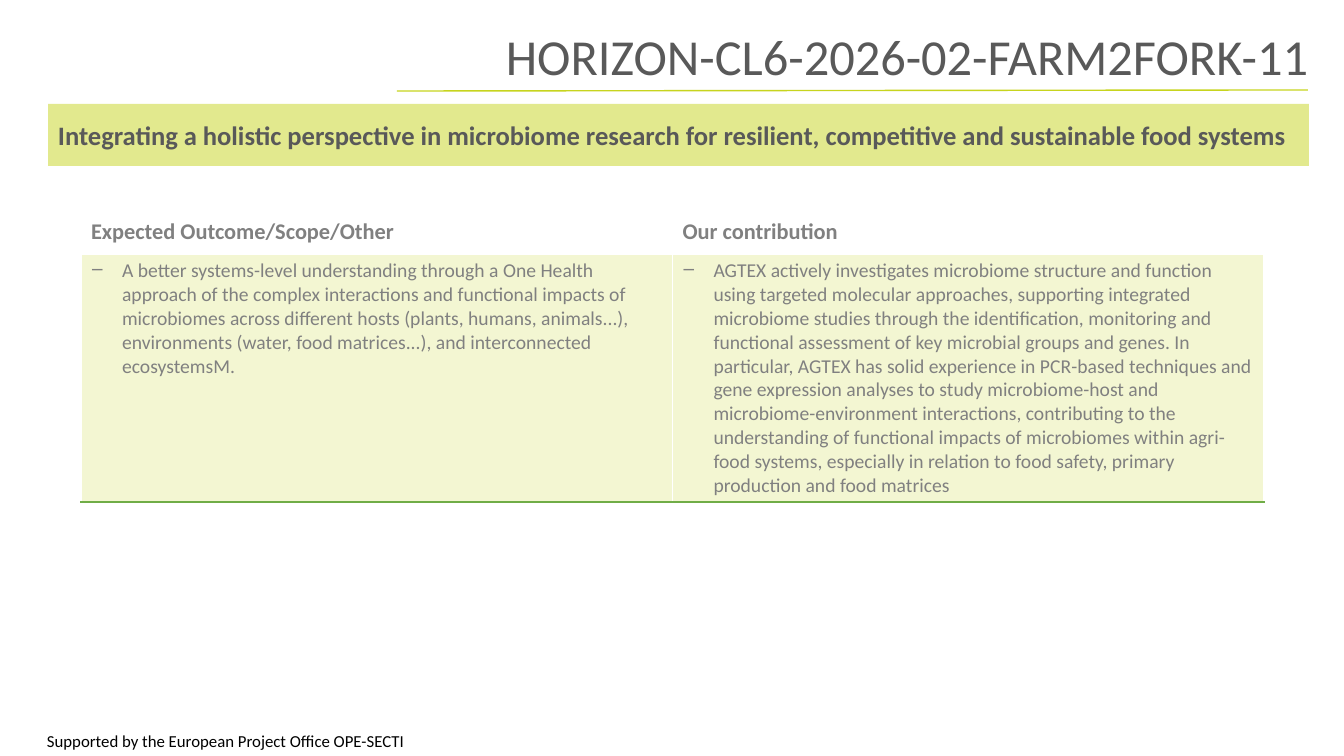
import pptx
import pptx.dml.color
import pptx.enum.shapes
import pptx.enum.text
import pptx.oxml
import pptx.oxml.ns
import pptx.util
from lxml import etree

RGBColor = pptx.dml.color.RGBColor
ANCHOR = pptx.enum.text.MSO_ANCHOR
ALIGN = pptx.enum.text.PP_ALIGN

LIME = RGBColor(0xC7, 0xD4, 0x1E)
GREEN = RGBColor(0x70, 0xAD, 0x47)
DARK_GREY = RGBColor(0x59, 0x59, 0x59)
GREY = RGBColor(0x80, 0x80, 0x80)
BLACK = RGBColor(0, 0, 0)

FONT = "Calibri"
PX_PER_INCH = 100.8

TOPIC = "HORIZON-CL6-2026-02-FARM2FORK-11"
SUBJECT = (
    "Integrating a holistic perspective in microbiome research for resilient, "
    "competitive and sustainable food systems"
)
SUPPORT = "Supported by the European Project Office OPE-SECTI"
COLUMNS = [
    (
        "Expected Outcome/Scope/Other",
        "A better systems-level understanding through a One Health approach of the "
        "complex interactions and functional impacts of microbiomes across different "
        "hosts (plants, humans, animals...), environments (water, food matrices...), "
        "and interconnected ecosystemsM.",
    ),
    (
        "Our contribution",
        "AGTEX actively investigates microbiome structure and function using targeted "
        "molecular approaches, supporting integrated microbiome studies through the "
        "identification, monitoring and functional assessment of key microbial groups "
        "and genes. In particular, AGTEX has solid experience in PCR-based techniques "
        "and gene expression analyses to study microbiome-host and "
        "microbiome-environment interactions, contributing to the understanding of "
        "functional impacts of microbiomes within agri-food systems, especially in "
        "relation to food safety, primary production and food matrices",
    ),
]


def px(length):
    return pptx.util.Inches(length / PX_PER_INCH)


def write(frame, text, size, color, bold=False):
    """Fill a text frame with one formatted paragraph and return it."""
    frame.word_wrap = True
    para = frame.paragraphs[0]
    para.text = text
    font = para.font
    font.name, font.size, font.bold = FONT, pptx.util.Pt(size), bold
    font.color.rgb = color
    return para


def fill_tint(fill, color, percent):
    """Give a solid fill that is only percent opaque."""
    fill.solid()
    fill.fore_color.rgb = color
    tint = fill._xPr.find(".//" + pptx.oxml.ns.qn("a:srgbClr"))
    etree.SubElement(tint, pptx.oxml.ns.qn("a:alpha"), val=str(percent * 1000))


def add_dash(para):
    """Turn a paragraph into a dashed list item with a hanging indent."""
    properties = para._p.get_or_add_pPr()
    indent = px(31)
    properties.set("marL", str(indent))
    properties.set("indent", str(-indent))
    etree.SubElement(properties, pptx.oxml.ns.qn("a:buChar"), char="‒")


def add_bottom_border(cell, color):
    border = pptx.oxml.parse_xml(
        f'<a:lnB {pptx.oxml.ns.nsdecls("a")} w="12700"><a:solidFill>'
        f'<a:srgbClr val="{color}"/></a:solidFill></a:lnB>'
    )
    cell._tc.get_or_add_tcPr().insert(0, border)


def add_title(page):
    title = page.shapes.title
    title.left, title.top, title.width, title.height = px(444), px(18), px(875), px(73)
    title.text_frame.vertical_anchor = ANCHOR.BOTTOM
    para = write(title.text_frame, TOPIC, 36, DARK_GREY)
    para.alignment = ALIGN.RIGHT
    para.line_spacing = 0.9


def add_rule(page):
    rule = page.shapes.add_connector(
        pptx.enum.shapes.MSO_CONNECTOR.STRAIGHT, px(397), px(91), px(1308), px(90)
    )
    rule.line.color.rgb = LIME
    rule.line.width = pptx.util.Pt(1)
    etree.SubElement(rule._element.spPr, pptx.oxml.ns.qn("a:effectLst"))


def add_banner(page):
    banner = page.shapes.add_shape(
        pptx.enum.shapes.MSO_SHAPE.RECTANGLE, px(48), px(104), px(1261), px(62)
    )
    banner.shadow.inherit = False
    banner.line.fill.background()
    fill_tint(banner.fill, LIME, 50)
    banner.text_frame.vertical_anchor = ANCHOR.MIDDLE
    write(banner.text_frame, SUBJECT, 19, DARK_GREY, True).alignment = ALIGN.LEFT


def add_contribution_table(page):
    table = page.shapes.add_table(
        2, len(COLUMNS), px(81), px(213), px(1183), px(289)
    ).table
    table.first_row = table.horz_banding = False
    table.rows[0].height, table.rows[1].height = px(41), px(248)
    for column, (heading, item) in enumerate(COLUMNS):
        head, body = table.cell(0, column), table.cell(1, column)
        head.fill.background()
        write(head.text_frame, heading, 16, GREY, True)
        fill_tint(body.fill, LIME, 20)
        add_bottom_border(body, GREEN)
        add_dash(body.text_frame.paragraphs[0])
        write(body.text_frame, item, 14, GREY)


def add_support_note(page):
    box = page.shapes.add_textbox(px(37), px(724), px(391), px(32))
    write(box.text_frame, SUPPORT, 12, BLACK).line_spacing = 1.1


def main():
    deck = pptx.Presentation()
    deck.slide_width, deck.slide_height = px(1344), px(756)
    title_only = deck.slide_layouts[5]
    page = deck.slides.add_slide(title_only)
    add_support_note(page)
    add_contribution_table(page)
    add_rule(page)
    add_title(page)
    add_banner(page)
    deck.save("out.pptx")


if __name__ == "__main__":
    main()
